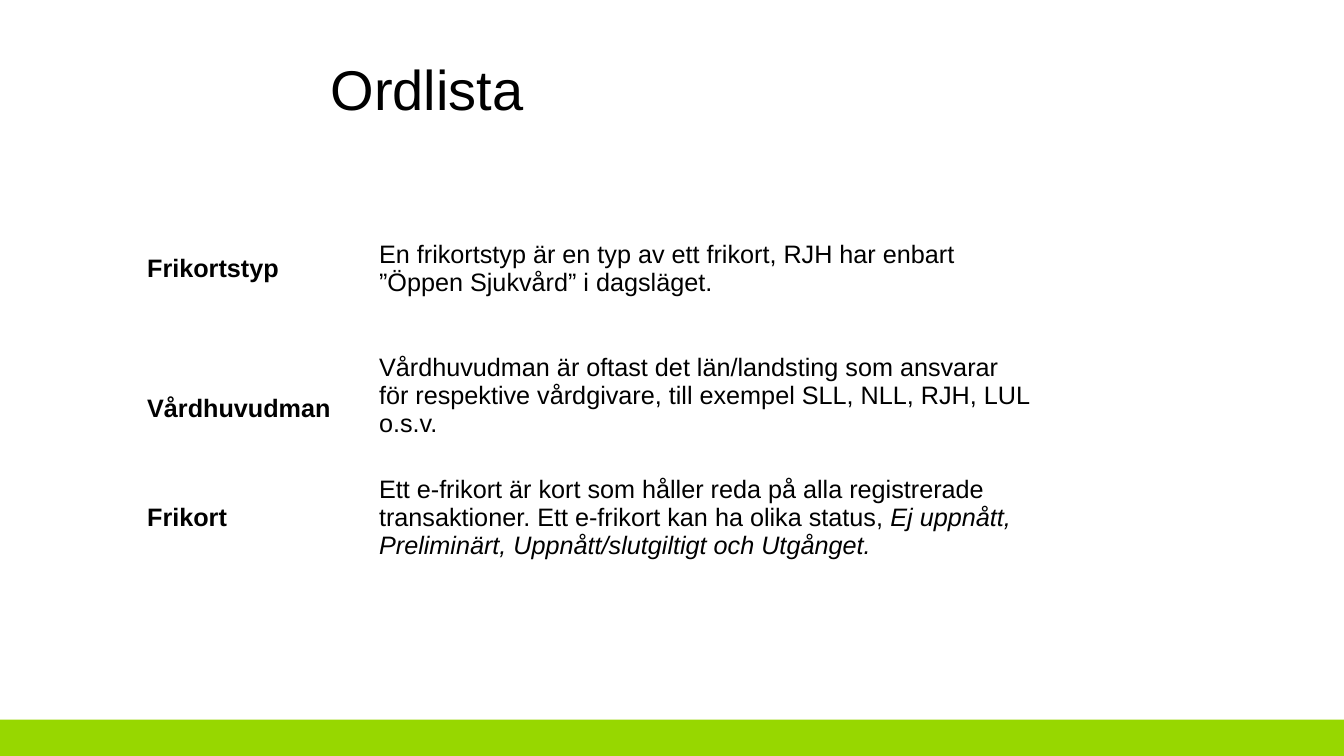
from pptx import Presentation
from pptx.dml.color import RGBColor
from pptx.enum.shapes import MSO_SHAPE
from pptx.enum.text import MSO_ANCHOR
from pptx.util import Inches, Pt

RECTANGLE = MSO_SHAPE.RECTANGLE
TOP = MSO_ANCHOR.TOP
MIDDLE = MSO_ANCHOR.MIDDLE
FONT = "Arial"
BLACK = "000000"
GREEN = "97D700"
COLUMN_WIDTHS = (2.3, 6.7)
CELL_MARGIN = 0.05

# term, definition runs (text, italic), row height, offset of term and definition
GLOSSARY = [
    ("Frikortstyp",
     [("En frikortstyp är en typ av ett frikort, RJH har enbart "
       "”Öppen Sjukvård” i dagsläget.", False)],
     1.56, 0),
    ("Vårdhuvudman",
     [("Vårdhuvudman är oftast det län/landsting som ansvarar för respektive "
       "vårdgivare, till exempel SLL, NLL, RJH, LUL o.s.v.", False)],
     1.08, 0.13),
    ("Frikort",
     [("Ett e-frikort är kort som håller reda på alla registrerade "
       "transaktioner. Ett e-frikort kan ha olika status, ", False),
      ("Ej uppnått, Preliminärt, Uppnått/slutgiltigt och Utgånget.", True)],
     1.22, 0),
]


def color(value):
    return RGBColor.from_string(value)


def add_run(paragraph, text, size, bold=False, italic=False):
    run = paragraph.add_run()
    run.text = text
    run.font.name = FONT
    run.font.size = Pt(size)
    run.font.bold = bold
    run.font.italic = italic
    run.font.color.rgb = color(BLACK)


def add_footer_bar(slide, left, top, width, height):
    bar = slide.shapes.add_shape(
        RECTANGLE, Inches(left), Inches(top), Inches(width), Inches(height))
    bar.shadow.inherit = False
    bar.fill.solid()
    bar.fill.fore_color.rgb = color(GREEN)
    bar.line.fill.background()


def add_title(slide, left, top, width, height):
    box = slide.shapes.add_textbox(
        Inches(left), Inches(top), Inches(width), Inches(height))
    frame = box.text_frame
    frame.word_wrap = True
    frame.vertical_anchor = TOP
    paragraph = frame.paragraphs[0]
    paragraph.line_spacing = 0.9
    add_run(paragraph, "Ordlista", 40)


def fill_cell(cell, runs, bold=False):
    cell.fill.background()
    cell.vertical_anchor = MIDDLE
    paragraph = cell.text_frame.paragraphs[0]
    paragraph.line_spacing = Pt(20)
    for text, italic in runs:
        add_run(paragraph, text, 18, bold, italic)


def add_glossary(slide, left, top):
    height = sum(row_height for _, _, row_height, _ in GLOSSARY)
    table = slide.shapes.add_table(
        len(GLOSSARY), len(COLUMN_WIDTHS), Inches(left), Inches(top),
        Inches(sum(COLUMN_WIDTHS)), Inches(height)).table
    table.first_row = False
    table.horz_banding = False
    for column, width in zip(table.columns, COLUMN_WIDTHS):
        column.width = Inches(width)
    for row, (term, definition, row_height, offset) in zip(table.rows, GLOSSARY):
        row.height = Inches(row_height)
        term_cell, definition_cell = row.cells
        fill_cell(term_cell, [(term, False)], bold=True)
        fill_cell(definition_cell, definition)
        term_cell.margin_top = Inches(CELL_MARGIN + offset)
        definition_cell.margin_bottom = Inches(CELL_MARGIN + offset)


def main():
    presentation = Presentation()
    presentation.slide_width = Inches(13.33)
    presentation.slide_height = Inches(7.5)
    slide = presentation.slides.add_slide(presentation.slide_layouts[6])
    slide.background.fill.solid()
    slide.background.fill.fore_color.rgb = color("FFFFFF")
    add_footer_bar(slide, 0, 7.14, 13.33, 0.36)
    add_title(slide, 3.18, 0.57, 8.11, 1.38)
    add_glossary(slide, 1.36, 1.89)
    presentation.save("out.pptx")


if __name__ == "__main__":
    main()
